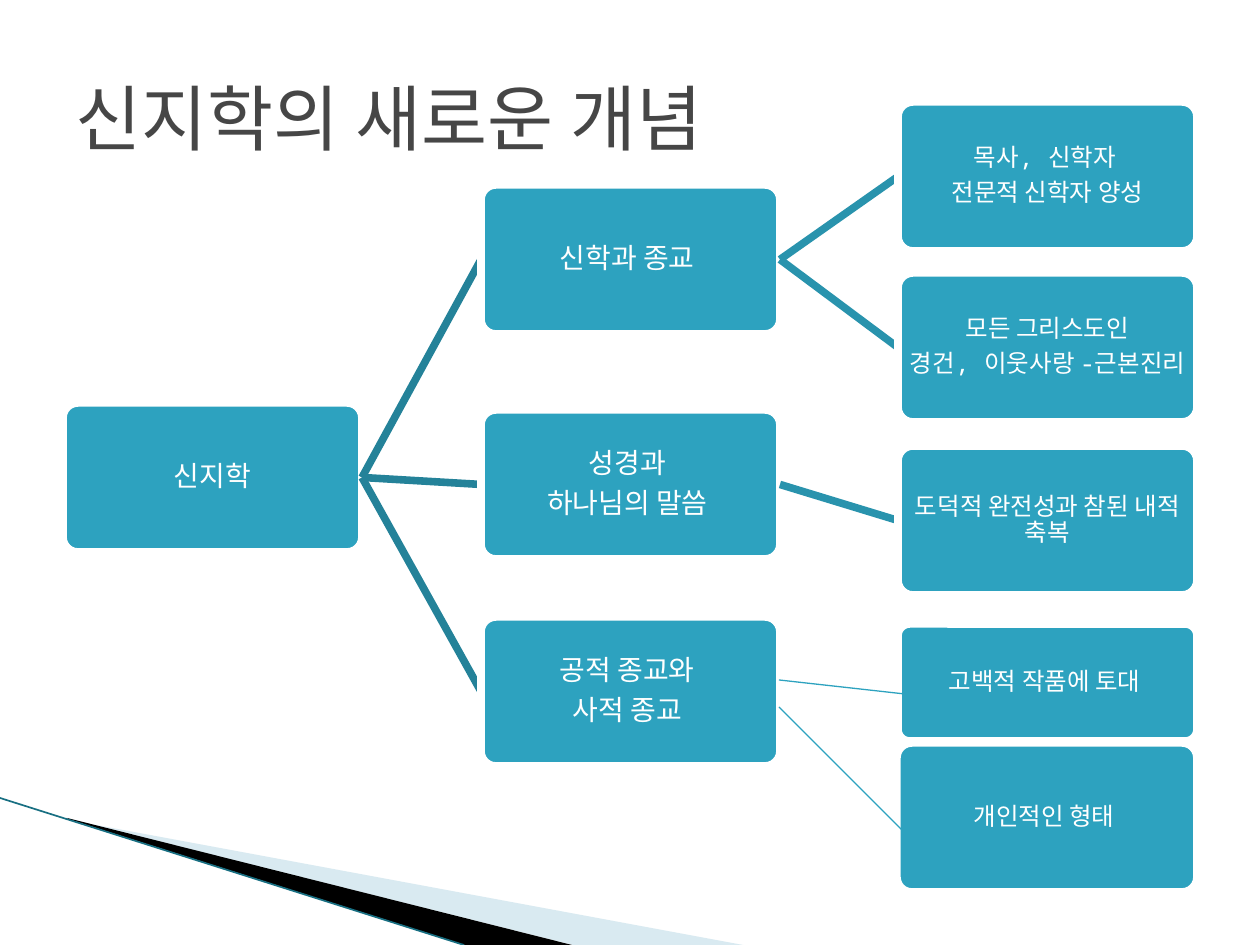
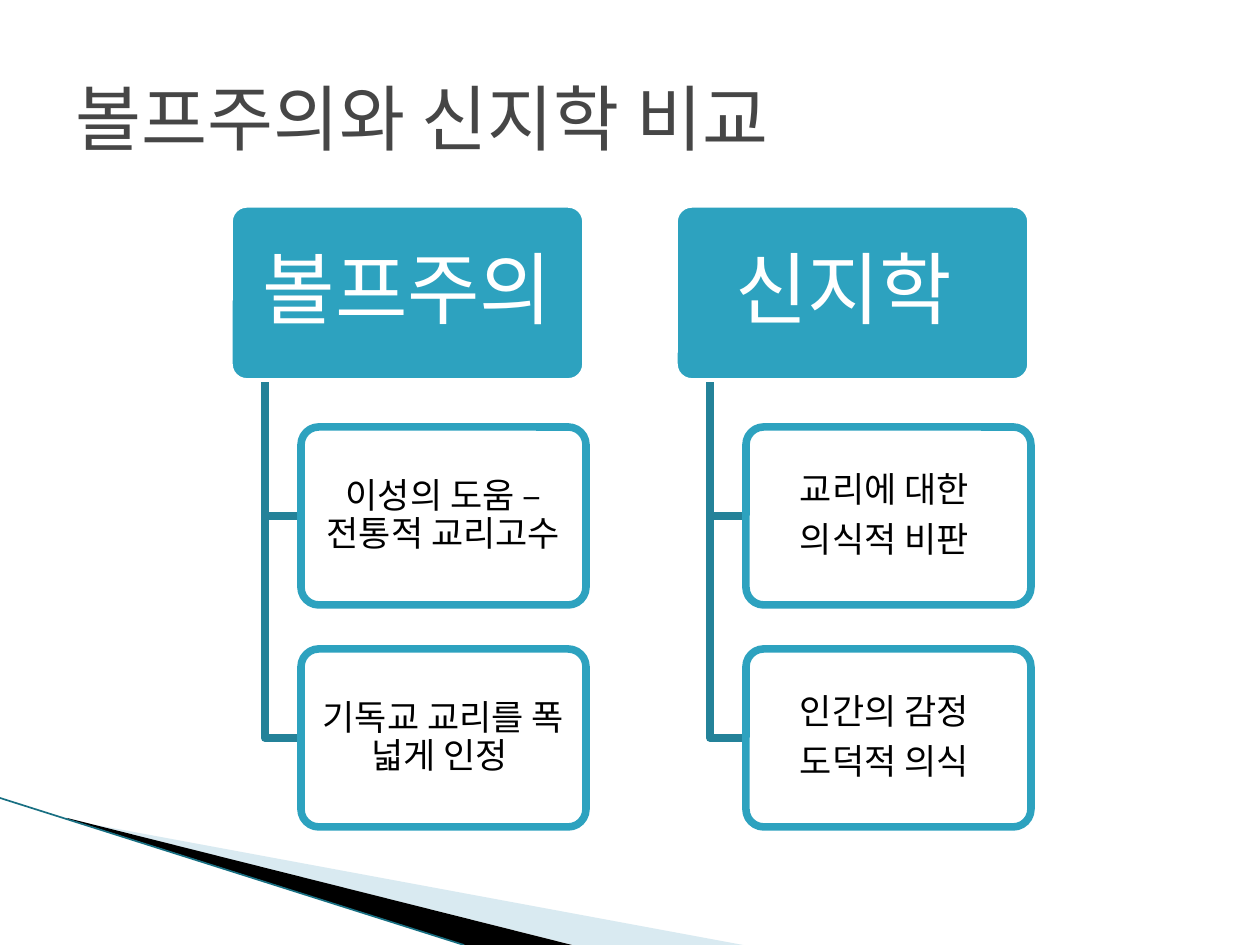
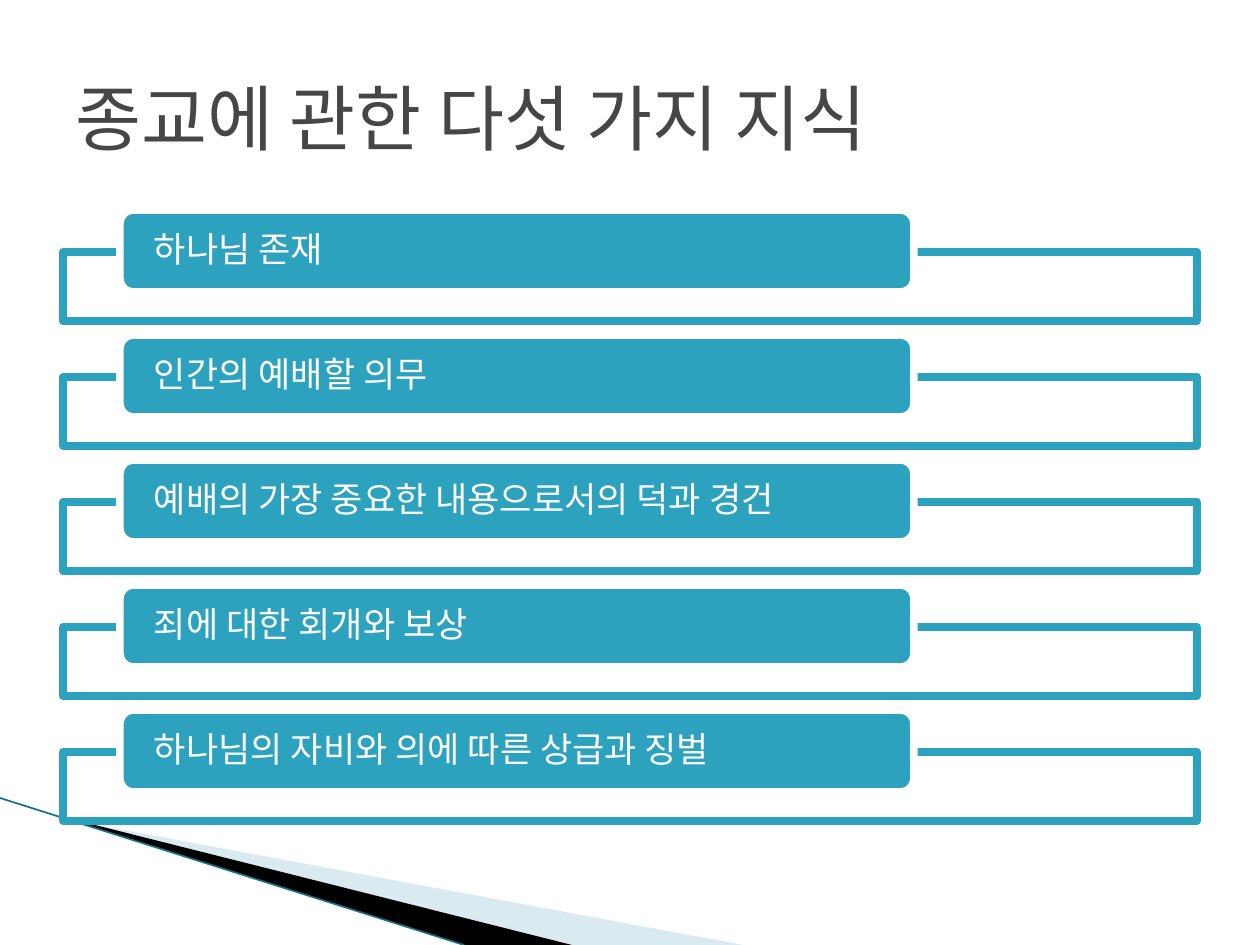
from lxml.etree import SubElement
from pptx import Presentation
from pptx.dml.color import RGBColor
from pptx.enum.shapes import MSO_CONNECTOR, MSO_SHAPE
from pptx.enum.text import MSO_ANCHOR, PP_ALIGN
from pptx.oxml.ns import qn
from pptx.util import Emu, Pt

SCALE = 914400 / 126
WIDE, HIGH = 1260, 945
FONT = "Noto Sans Mono"
TEAL, DEEP, MID = "2DA2BF", "248299", "2993AD"
WHITE, BLACK, GREY = "FFFFFF", "000000", "464646"
PALE, EDGE = "A0CBDC", "186F82"
THICK = 4.33


def px(n):
    """Turn pixels into EMU."""
    return Emu(round(n * SCALE))


def hue(code):
    """Turn a hex string into a colour."""
    return RGBColor.from_string(code)


def paint(shape, fill, line=None, alpha=100):
    """Set the fill, outline and opacity of a shape."""
    shape.shadow.inherit = False
    if fill:
        shape.fill.solid()
        shape.fill.fore_color.rgb = hue(fill)
        if alpha < 100:
            tone = shape.fill._xPr.find(".//" + qn("a:srgbClr"))
            SubElement(tone, qn("a:alpha"), val=str(alpha * 1000))
    else:
        shape.fill.background()
    if line:
        shape.line.color.rgb = hue(line)
        shape.line.width = Pt(THICK)
    else:
        shape.line.fill.background()


def write(shape, lines, size, color, pad, align=PP_ALIGN.CENTER, tight=True):
    """Write one paragraph for each line of text."""
    frame = shape.text_frame
    frame.word_wrap = True
    frame.vertical_anchor = MSO_ANCHOR.MIDDLE
    frame.margin_left = frame.margin_right = px(pad[0])
    frame.margin_top = frame.margin_bottom = px(pad[1])
    for i, line in enumerate(lines):
        para = frame.paragraphs[0] if i == 0 else frame.add_paragraph()
        para.alignment = align
        if tight:
            para.line_spacing = 0.9
            para.space_after = Pt(size * 0.35)
        run = para.add_run()
        run.text = line
        font = run.font
        font.name, font.size = FONT, Pt(size)
        font.color.rgb = hue(color)


def block(slide, box, fill=TEAL, line=WHITE, alpha=100, curve=0.1):
    """Add a box, rounded when it has a curve."""
    kind = MSO_SHAPE.ROUNDED_RECTANGLE if curve else MSO_SHAPE.RECTANGLE
    shape = slide.shapes.add_shape(kind, *map(px, box))
    if curve:
        shape.adjustments[0] = curve
    paint(shape, fill, line, alpha)
    return shape


def trace(slide, points, close, fill=None, line=None, alpha=100):
    """Add a free outline through the points."""
    pen = slide.shapes.build_freeform(*points[0], SCALE)
    pen.add_line_segments(points[1:], close=close)
    paint(pen.convert_to_shape(), fill, line, alpha)


def link(slide, start, end, color, width):
    """Add a straight line."""
    wire = slide.shapes.add_connector(MSO_CONNECTOR.STRAIGHT, *map(px, start + end))
    wire.line.color.rgb = hue(color)
    wire.line.width = Pt(width)
    SubElement(wire._element.spPr, qn("a:effectLst"))
    return wire


def base(deck, title):
    """Add a slide with the corner sweep and its title."""
    slide = deck.slides.add_slide(deck.slide_layouts[6])
    trace(slide, [(69, 820), (743, HIGH), (573, HIGH), (69, 819)], True, PALE, alpha=40)
    trace(slide, [(67, 818), (572, HIGH), (465, HIGH), (68, 819)], True, BLACK)
    link(slide, (0, 798), (464, HIGH), EDGE, 0.95)
    box = slide.shapes.add_textbox(*map(px, (63, 38, 1134, 158)))
    write(box, [title], 41, GREY, (13, 6), PP_ALIGN.LEFT, False)
    return slide


def node(slide, box, lines, size, source=None, color=DEEP):
    """Add a tree box, with a branch from its source running under it."""
    shape = block(slide, box)
    write(shape, lines, size, WHITE, (1, 1))
    if source:
        wire = link(slide, (0, 0), (1, 1), color, THICK)
        wire.begin_connect(source, 3)
        wire.end_connect(shape, 1)
        shape._element.addprevious(wire._element)
    return shape


def tree(slide, box):
    """Draw the three-level tree."""
    x, y = box
    wide, high = 299, 149
    root = node(slide, (x, y + 301, wide, high), ["신지학"], 16)
    twigs = [
        (83, ["신학과 종교 "], [
            (0, ["목사, 신학자 ", "전문적 신학자 양성"]),
            (171, ["모든 그리스도인", "경건, 이웃사랑 -근본진리"])]),
        (308, ["성경과 ", "하나님의 말씀 "], [(344, ["도덕적 완전성과 참된 내적 축복"])]),
        (515, ["공적 종교와 ", "사적 종교 "], []),
    ]
    for top, lines, leaves in twigs:
        twig = node(slide, (x + 418, y + top, wide, high), lines, 16, root)
        for drop, words in leaves:
            node(slide, (x + 835, y + drop, wide, high), words, 14, twig, MID)
    node(slide, (x + 835, y + 522, wide, 117), ["고백적 작품에 토대 "], 14)
    node(slide, (x + 834, y + 641, 300, high), ["개인적인 형태 "], 14)
    for start, end in ((578, 592), (605, 731)):
        link(slide, (x + 716, y + start), (x + 842, y + end), TEAL, 0.75)


def column(slide, box, name, items):
    """Draw a heading with its items hanging from a trunk."""
    x, y, wide, high = box
    write(block(slide, box), [name], 45, WHITE, (11, 8))
    for i, lines in enumerate(items):
        top = y + 223 + 222 * i
        mid = top + high // 2
        trace(slide, [(x + 36, y + high), (x + 36, mid), (x + 72, mid)], False, line=DEEP)
        card = block(slide, (x + 72, top, wide - 72, high), WHITE, TEAL, 90)
        write(card, lines, 20, BLACK, (5, 4))


def bars(slide, box, items):
    """Draw a list of labels set on frames."""
    x, y, wide, step = box
    for i, item in enumerate(items):
        top = y + step * i
        block(slide, (x, top + 42, wide, 69), WHITE, TEAL, 90, 0)
        label = block(slide, (x + 57, top, 794, 82), curve=0.167)
        write(label, [item], 20, WHITE, (30, 0), PP_ALIGN.LEFT)


def main():
    """Build the three slides."""
    deck = Presentation()
    deck.slide_width, deck.slide_height = px(WIDE), px(HIGH)

    tree(base(deck, "신지학의 새로운 개념"), (63, 102))

    slide = base(deck, "볼프주의와 신지학 비교")
    sides = [
        ("볼프주의", [["이성의 도움 – 전통적 교리고수"], ["기독교 교리를 폭 넓게 인정 "]]),
        ("신지학 ", [["교리에 대한 ", "의식적 비판 "], ["인간의 감정 ", "도덕적 의식 "]]),
    ]
    for i, (name, items) in enumerate(sides):
        column(slide, (229 + 445 * i, 204, 357, 178), name, items)

    bars(base(deck, "종교에 관한 다섯 가지 지식"), (63, 210, 1134, 125), [
        "하나님 존재",
        "인간의 예배할 의무",
        "예배의 가장 중요한 내용으로서의 덕과 경건",
        "죄에 대한 회개와 보상",
        "하나님의 자비와 의에 따른 상급과 징벌",
    ])
    deck.save("out.pptx")


if __name__ == "__main__":
    main()
